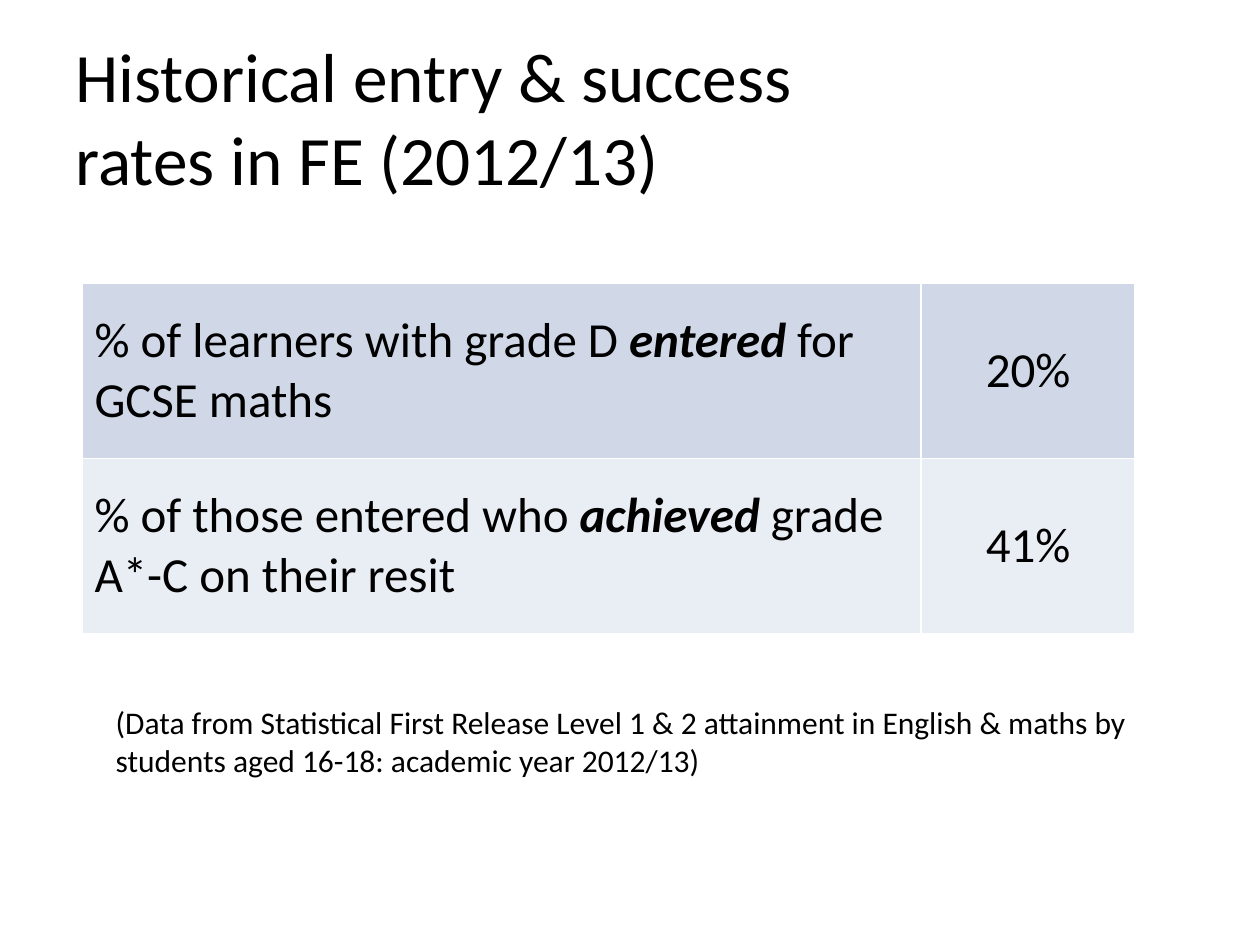
from pptx import Presentation
from pptx.dml.color import RGBColor
from pptx.enum.text import MSO_ANCHOR, MSO_AUTO_SIZE, PP_ALIGN
from pptx.util import Inches, Pt

FONT = "Calibri"
BLACK = RGBColor(0x00, 0x00, 0x00)
ROW_FILLS = (RGBColor(0xD0, 0xD8, 0xE8), RGBColor(0xE9, 0xED, 0xF4))

TITLE = "Historical entry & success rates in FE (2012/13)"
# Each label is a list of (text, emphasised) runs.
RATES = [
    ([("% of learners with grade D ", False), ("entered", True),
      (" for GCSE maths", False)], "20%"),
    ([("% of those entered who ", False), ("achieved", True),
      (" grade A*-C on their resit", False)], "41%"),
]
SOURCE = ("(Data from Statistical First Release Level 1 & 2 attainment in "
          "English & maths by students aged 16-18: academic year 2012/13)")


def add_run(p, text, size, emphasis=False):
    r = p.add_run()
    r.text = text
    r.font.name = FONT
    r.font.size = Pt(size)
    r.font.color.rgb = BLACK
    r.font.bold = r.font.italic = emphasis


def add_title(slide, left, top, width, height):
    sp = slide.shapes.title
    sp.left, sp.top, sp.width, sp.height = left, top, width, height
    tf = sp.text_frame
    tf.word_wrap = True
    tf.auto_size = MSO_AUTO_SIZE.NONE
    tf.vertical_anchor = MSO_ANCHOR.MIDDLE
    p = tf.paragraphs[0]
    p.alignment = PP_ALIGN.LEFT
    add_run(p, TITLE, 39.6)


def add_rates_table(slide, left, top, width, height):
    table = slide.shapes.add_table(len(RATES), 2, left, top, width, height).table
    table.first_row = False
    label_width = Inches(6.66)
    table.columns[0].width = label_width
    table.columns[1].width = width - label_width
    for row, (label, rate), fill in zip(table.rows, RATES, ROW_FILLS):
        label_cell, rate_cell = row.cells
        for cell in (label_cell, rate_cell):
            cell.fill.solid()
            cell.fill.fore_color.rgb = fill
            cell.vertical_anchor = MSO_ANCHOR.MIDDLE
        for text, emphasis in label:
            add_run(label_cell.text_frame.paragraphs[0], text, 28, emphasis)
        p = rate_cell.text_frame.paragraphs[0]
        p.alignment = PP_ALIGN.CENTER
        add_run(p, rate, 28)


def add_source_note(slide, left, top, width, height):
    tf = slide.shapes.add_textbox(left, top, width, height).text_frame
    tf.word_wrap = True
    tf.auto_size = MSO_AUTO_SIZE.SHAPE_TO_FIT_TEXT
    add_run(tf.paragraphs[0], SOURCE, 18)


def main():
    prs = Presentation()
    prs.slide_width, prs.slide_height = Inches(10), Inches(7.5)
    slide = prs.slides.add_slide(prs.slide_layouts[5])
    add_title(slide, Inches(0.5), Inches(0.3), Inches(6.67), Inches(1.25))
    add_rates_table(slide, Inches(0.65), Inches(2.25), Inches(8.36), Inches(2.78))
    add_source_note(slide, Inches(0.82), Inches(5.53), Inches(8.37), Inches(0.71))
    prs.save("out.pptx")


if __name__ == "__main__":
    main()
